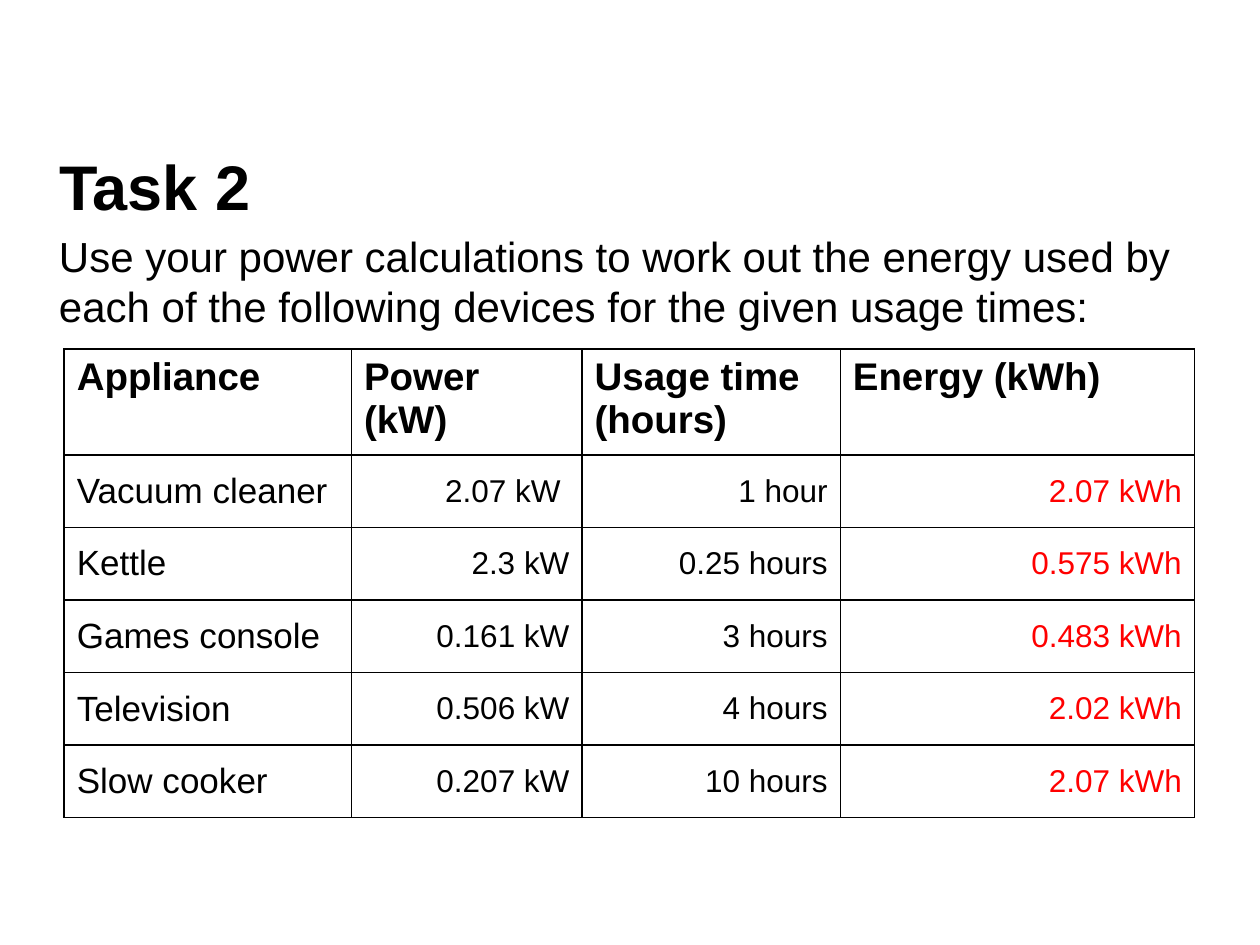
from lxml import etree
from pptx import Presentation
from pptx.dml.color import RGBColor
from pptx.enum import text
from pptx.oxml import ns
from pptx.util import Inches, Pt

BLACK = RGBColor(0x00, 0x00, 0x00)
RED = RGBColor(0xFF, 0x00, 0x00)
FONT = "Arial"

TITLE = "Task 2"
INSTRUCTION = (
    "Use your power calculations to work out the energy used by "
    "each of the following devices for the given usage times:"
)
HEADERS = ("Appliance", "Power (kW)", "Usage time (hours)", "Energy (kWh)")
APPLIANCES = [
    ("Vacuum cleaner", "2.07 kW ", "1 hour", "2.07 kWh"),
    ("Kettle", "2.3 kW", "0.25 hours", "0.575 kWh"),
    ("Games console", "0.161 kW", "3 hours", "0.483 kWh"),
    ("Television", "0.506 kW", "4 hours", "2.02 kWh"),
    ("Slow cooker", "0.207 kW", "10 hours", "2.07 kWh"),
]
COLUMN_WIDTHS = (2.28, 1.83, 2.05, 2.81)
HEADER_HEIGHT = 0.84
ROW_HEIGHT = 0.576


def style(para, size, bold=False, color=BLACK):
    para.font.name = FONT
    para.font.size = Pt(size)
    para.font.bold = bold
    para.font.color.rgb = color


def add_text(page, words, place, size, bold=False, anchor=text.MSO_ANCHOR.TOP):
    frame = page.shapes.add_textbox(*map(Inches, place)).text_frame
    frame.word_wrap = True
    frame.vertical_anchor = anchor
    para = frame.paragraphs[0]
    para.text = words
    style(para, size, bold)
    return para


def add_borders(cell):
    properties = cell._tc.get_or_add_tcPr()
    for side in ("lnL", "lnR", "lnT", "lnB"):
        line = etree.SubElement(properties, ns.qn(f"a:{side}"), w=str(Pt(1)))
        fill = etree.SubElement(line, ns.qn("a:solidFill"))
        etree.SubElement(fill, ns.qn("a:srgbClr"), val=str(BLACK))


def fill_cell(cell, words, row, column):
    add_borders(cell)
    cell.fill.background()
    cell.text = words
    para = cell.text_frame.paragraphs[0]
    if row == 0:
        style(para, 22, bold=True)
        return
    cell.vertical_anchor = text.MSO_ANCHOR.MIDDLE
    if column == 0:
        style(para, 20)
        return
    para.alignment = text.PP_ALIGN.RIGHT
    style(para, 18, color=RED if column == len(HEADERS) - 1 else BLACK)


def add_energy_table(page):
    rows = [HEADERS, *APPLIANCES]
    heights = [HEADER_HEIGHT] + [ROW_HEIGHT] * len(APPLIANCES)
    table = page.shapes.add_table(
        len(rows), len(HEADERS), Inches(0.51), Inches(2.77),
        Inches(sum(COLUMN_WIDTHS)), Inches(sum(heights)),
    ).table
    table.first_row = False
    table.horz_banding = False
    for column, width in zip(table.columns, COLUMN_WIDTHS):
        column.width = Inches(width)
    for row, (height, values) in enumerate(zip(heights, rows)):
        table.rows[row].height = Inches(height)
        for column, words in enumerate(values):
            fill_cell(table.cell(row, column), words, row, column)


def main():
    deck = Presentation()
    deck.slide_width, deck.slide_height = Inches(10), Inches(7.5)
    page = deck.slides.add_slide(deck.slide_layouts[6])
    title = add_text(page, TITLE, (0.37, 1.14, 5.42, 0.74), 36, True, text.MSO_ANCHOR.MIDDLE)
    title.line_spacing = 0.9
    add_text(page, INSTRUCTION, (0.37, 1.78, 9.46, 0.91), 24)
    add_energy_table(page)
    deck.save("out.pptx")


if __name__ == "__main__":
    main()
